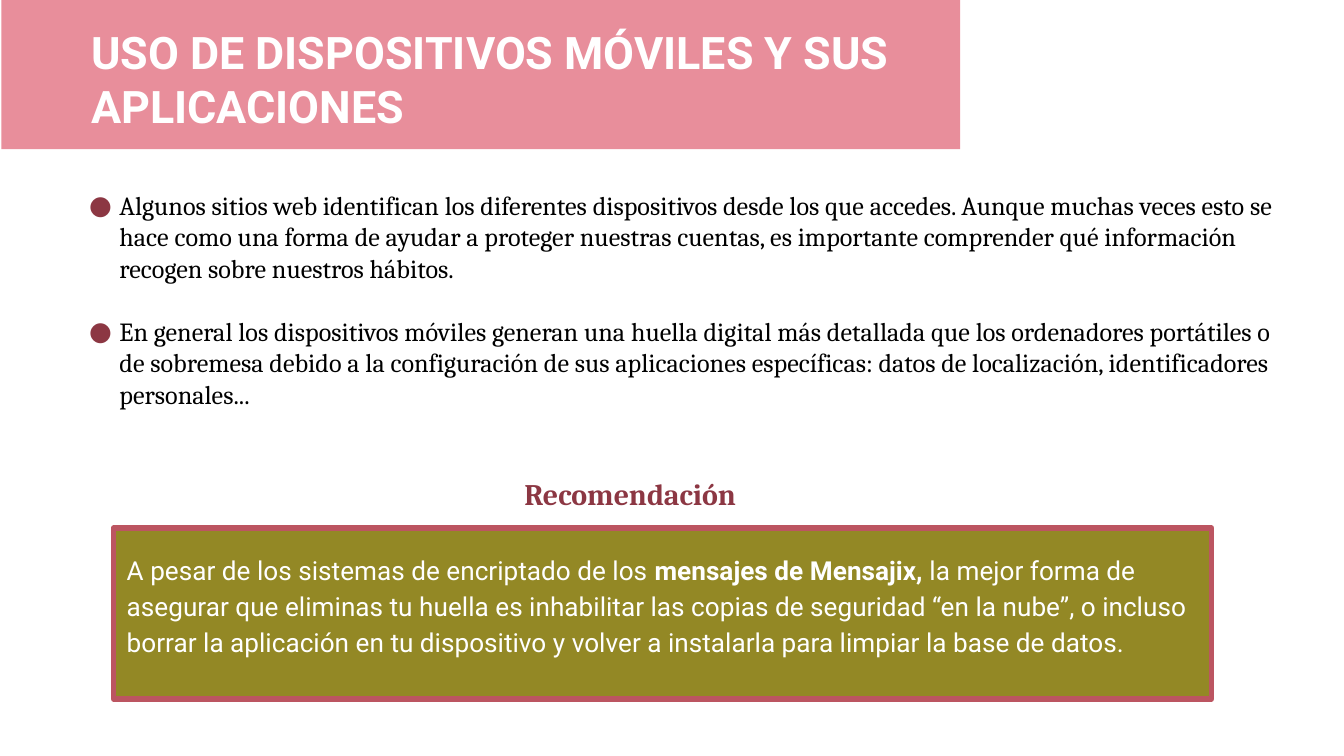
from lxml import etree
from pptx import Presentation
from pptx import util as u
from pptx.dml.color import RGBColor
from pptx.enum import shapes, text
from pptx.oxml.ns import qn

PX = 4572
COLORS = {
    "white": "FFFFFF",
    "black": "000000",
    "pink": "E88E9B",
    "wine": "8C3743",
    "olive": "938825",
    "rose": "BC5561",
}
POINTS = [
    "Algunos sitios web identifican los diferentes dispositivos desde los que accedes. "
    "Aunque muchas veces esto se hace como una forma de ayudar a proteger nuestras "
    "cuentas, es importante comprender qué información recogen sobre nuestros hábitos.",
    "En general los dispositivos móviles generan una huella digital más detallada que "
    "los ordenadores portátiles o de sobremesa debido a la configuración de sus "
    "aplicaciones específicas: datos de localización, identificadores personales...",
]
ADVICE = [
    ("A pesar de los sistemas de encriptado de los ", False),
    ("mensajes de Mensajix,", True),
    (" la mejor forma de asegurar que eliminas tu huella es inhabilitar las copias de "
     "seguridad “en la nube”, o incluso borrar la aplicación en tu dispositivo y volver "
     "a instalarla para limpiar la base de datos.", False),
]


def color(name):
    return RGBColor.from_string(COLORS[name])


def px(*lengths):
    return [u.Emu(length * PX) for length in lengths]


def add_panel(page, bounds, fill, border=None):
    panel = page.shapes.add_shape(shapes.MSO_SHAPE.RECTANGLE, *px(*bounds))
    panel.shadow.inherit = False
    panel.fill.solid()
    panel.fill.fore_color.rgb = color(fill)
    if border:
        panel.line.color.rgb = color(border)
        panel.line.width = u.Pt(3)
    else:
        panel.line.fill.background()


def add_text(page, bounds, paragraphs, font, size, ink):
    box = page.shapes.add_textbox(*px(*bounds))
    frame = box.text_frame
    frame.word_wrap = True
    frame.vertical_anchor = text.MSO_ANCHOR.TOP
    frame.margin_left, frame.margin_top, frame.margin_right, frame.margin_bottom = px(20, 20, 20, 20)
    for index, runs in enumerate(paragraphs):
        para = frame.add_paragraph() if index else frame.paragraphs[0]
        for words, bold in runs:
            span = para.add_run()
            span.text = words
            span.font.name = font
            span.font.size = u.Pt(size)
            span.font.bold = bold
            span.font.color.rgb = color(ink)
    return frame.paragraphs


def add_bullet(para, ink):
    props = para._p.get_or_add_pPr()
    indent, hanging = px(100, -45)
    props.set("marL", str(indent))
    props.set("indent", str(hanging))
    tint = etree.SubElement(props, qn("a:buClr"))
    etree.SubElement(tint, qn("a:srgbClr"), val=COLORS[ink])
    etree.SubElement(props, qn("a:buFont"), typeface="Roboto")
    etree.SubElement(props, qn("a:buChar"), char="●")


def main():
    deck = Presentation()
    deck.slide_width, deck.slide_height = px(2000, 1125)
    page = deck.slides.add_slide(deck.slide_layouts[6])

    add_panel(page, (2, 0, 1427, 222), "pink")
    title = "USO DE DISPOSITIVOS MÓVILES Y SUS APLICACIONES"
    add_text(page, (116, 17, 1322, 190), [[(title, True)]], "Roboto", 24, "white")

    points = [[(point, False)] for point in POINTS]
    for para in add_text(page, (58, 262, 1864, 778), points, "Cambria", 14, "black"):
        para.space_after = u.Pt(17)
        add_bullet(para, "wine")

    add_panel(page, (169, 786, 1634, 254), "olive", "rose")
    advice = add_text(page, (169, 798, 1634, 190), [ADVICE], "Roboto", 14, "white")
    advice[0].line_spacing = 1.15

    heading = add_text(page, (671, 688, 534, 78), [[("Recomendación", True)]], "Cambria", 16, "wine")
    heading[0].alignment = text.PP_ALIGN.CENTER

    deck.save("out.pptx")


if __name__ == "__main__":
    main()
